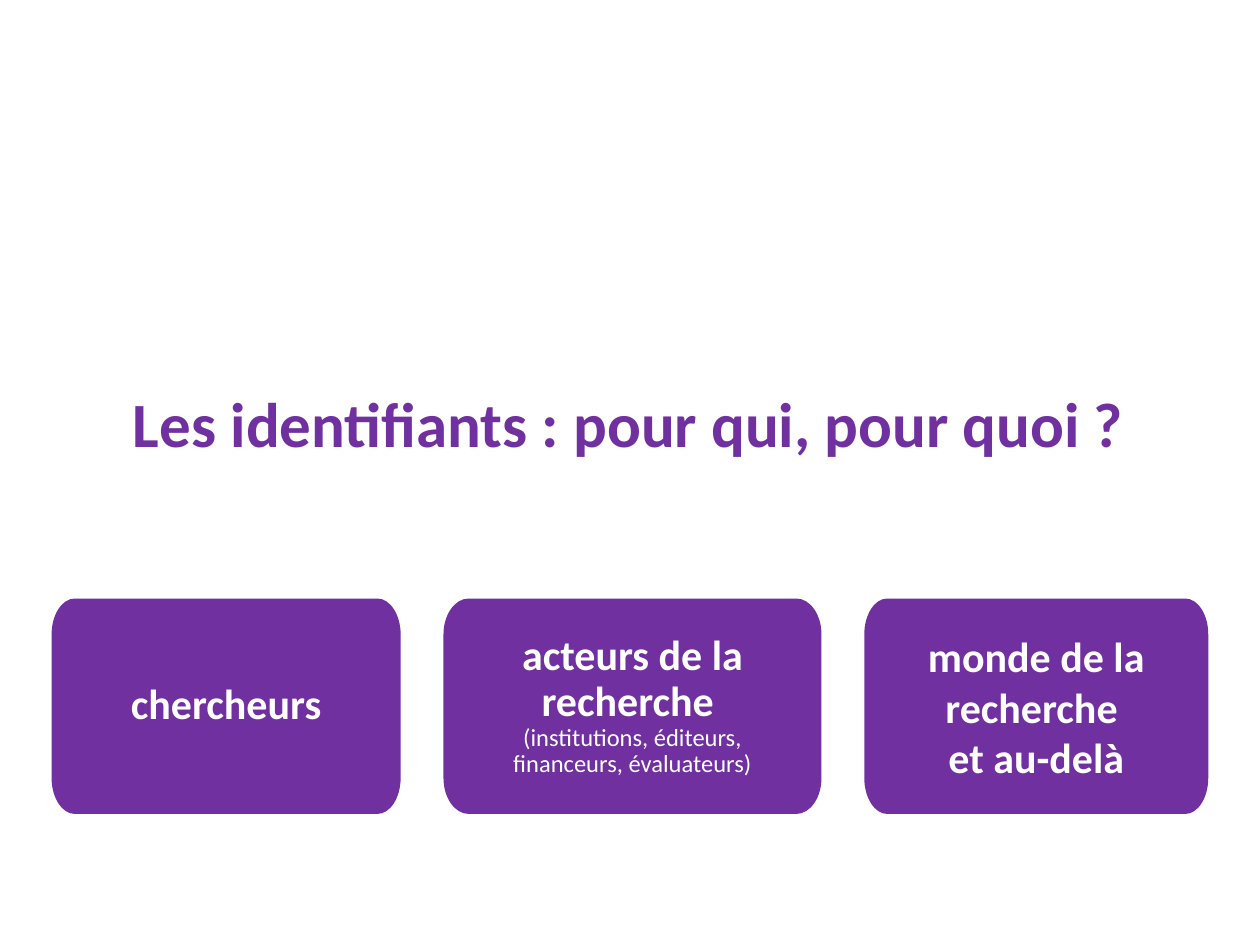
from dataclasses import dataclass

from pptx import Presentation
from pptx.dml.color import RGBColor
from pptx.enum.text import MSO_ANCHOR as Anchor, PP_ALIGN as Align
from pptx.oxml import parse_xml
from pptx.oxml.ns import nsdecls
from pptx.util import Inches, Pt

PURPLE = RGBColor(0x70, 0x30, 0xA0)
WHITE = RGBColor(0xFF, 0xFF, 0xFF)
FONT = "Calibri"
WIDE, HIGH = 10, 7.5
TOP, TALL = 4.75, 1.71
LEFT, GAP = 0.41, 0.34
BEND = 0.55


@dataclass(frozen=True)
class Style:
    size: float
    bold: bool
    color: RGBColor


@dataclass(frozen=True)
class Card:
    text: str
    width: float
    styles: tuple[Style, ...]
    space: float


HEAD = Style(24, True, WHITE)
NOTE = Style(14, False, WHITE)
TITLE = Style(36, True, PURPLE)
TAIL = Style(10.5, True, PURPLE)

CARDS = (
    Card("chercheurs", 2.77, (HEAD,), 0.9),
    Card(
        "acteurs de la recherche \v(institutions, éditeurs, financeurs, évaluateurs)",
        3,
        (HEAD, NOTE),
        0.9,
    ),
    Card("monde de la recherche \vet au-delà", 2.73, (HEAD, HEAD), 1),
)


def format_runs(para, styles: tuple[Style, ...]) -> None:
    para.alignment = Align.CENTER
    for run, style in zip(para.runs, styles):
        font = run.font
        font.name = FONT
        font.size = Pt(style.size)
        font.bold = style.bold
        font.color.rgb = style.color


def round_corners(shape, points: list[tuple[int, int]]) -> None:
    lines = shape.element.xpath(".//a:lnTo")
    for turn, line in enumerate(lines[::2]):
        start, end = points[2 * turn], points[2 * turn + 1]
        tip = (end[0], start[1]) if turn % 2 else (start[0], end[1])
        pulls = [
            tuple(int(a + BEND * (b - a)) for a, b in zip(point, tip))
            for point in (start, end)
        ]
        marks = "".join(f'<a:pt x="{x}" y="{y}"/>' for x, y in (*pulls, end))
        curve = parse_xml(f"<a:cubicBezTo {nsdecls('a')}>{marks}</a:cubicBezTo>")
        line.getparent().replace(line, curve)


def draw_outline(slide, left: float, width: float):
    wide, tall = Inches(width), Inches(TALL)
    horiz, vert = wide // 15, tall // 6
    points = [
        (0, vert), (horiz, 0),
        (wide - horiz, 0), (wide, vert),
        (wide, tall - vert), (wide - horiz, tall),
        (horiz, tall), (0, tall - vert),
    ]
    pen = slide.shapes.build_freeform(*points[0])
    pen.add_line_segments(points[1:], close=True)
    shape = pen.convert_to_shape(Inches(left), Inches(TOP))
    round_corners(shape, points)
    return shape


def draw_card(slide, card: Card, left: float) -> None:
    shape = draw_outline(slide, left, card.width)
    shape.shadow.inherit = False
    shape.fill.solid()
    shape.fill.fore_color.rgb = PURPLE
    shape.line.fill.background()
    frame = shape.text_frame
    frame.word_wrap = True
    frame.vertical_anchor = Anchor.MIDDLE
    frame.margin_left = frame.margin_right = Inches(0.21)
    frame.margin_top = frame.margin_bottom = Inches(0.14)
    para = frame.paragraphs[0]
    para.text = card.text
    para.line_spacing = card.space
    format_runs(para, card.styles)


def draw_title(slide) -> None:
    box = slide.shapes.add_textbox(
        Inches(0.74), Inches(0.4 * HIGH), Inches(8.53), Inches(0.71)
    )
    frame = box.text_frame
    frame.word_wrap = True
    para = frame.paragraphs[0]
    para.text = "Les identifiants : pour qui, pour quoi ?"
    para.add_run().text = " "
    format_runs(para, (TITLE, TAIL))


def main() -> None:
    deck = Presentation()
    deck.slide_width, deck.slide_height = Inches(WIDE), Inches(HIGH)
    slide = deck.slides.add_slide(deck.slide_layouts[6])
    left = LEFT
    for card in CARDS:
        draw_card(slide, card, left)
        left += card.width + GAP
    draw_title(slide)
    deck.save("out.pptx")


if __name__ == "__main__":
    main()
